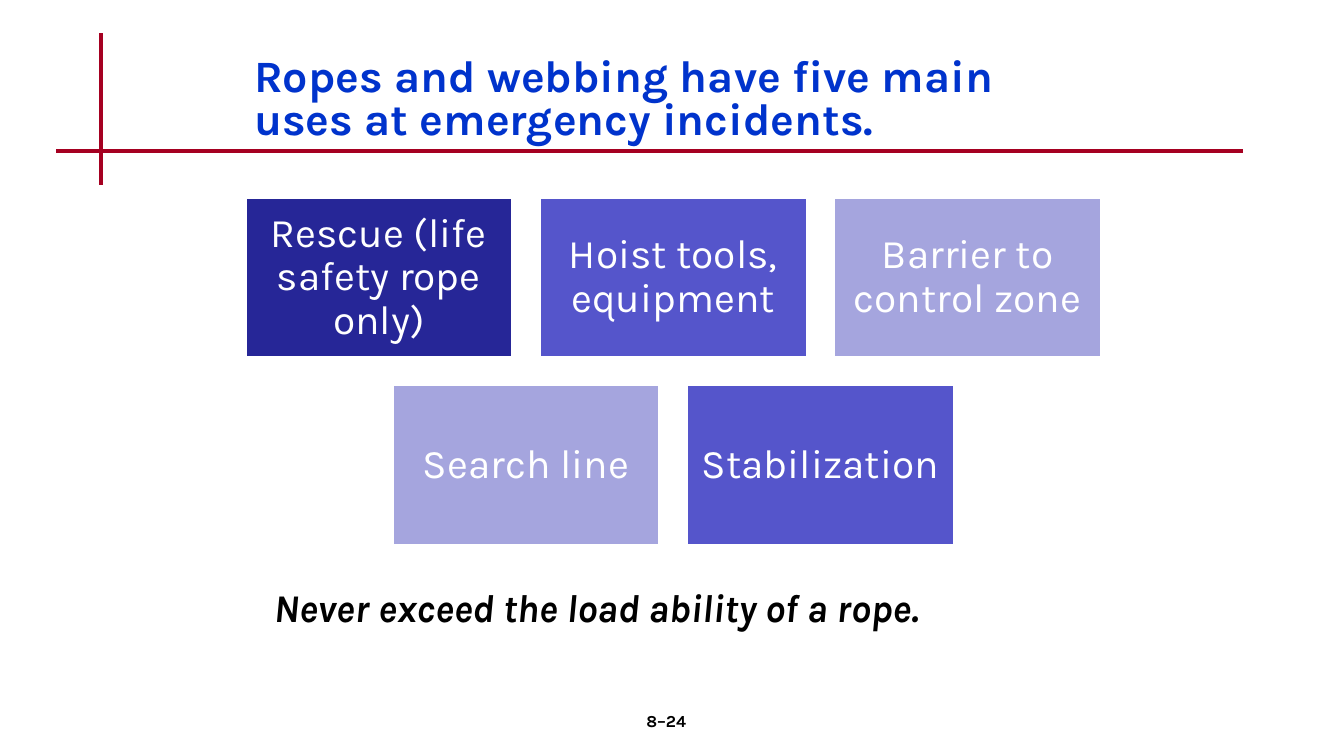
from dataclasses import dataclass

from pptx import Presentation
from pptx.dml.color import RGBColor
from pptx.enum.shapes import MSO_CONNECTOR, MSO_SHAPE
from pptx.enum.text import MSO_ANCHOR, PP_ALIGN
from pptx.oxml.ns import qn
from pptx.util import Cm, Pt
from lxml import etree

RECT = MSO_SHAPE.RECTANGLE
STRAIGHT = MSO_CONNECTOR.STRAIGHT
MIDDLE = MSO_ANCHOR.MIDDLE
TOP = MSO_ANCHOR.TOP
LEFT = PP_ALIGN.LEFT
CENTER = PP_ALIGN.CENTER
TITLE_ONLY = 5


@dataclass(frozen=True)
class Theme:
    font: str = "Karla"
    white: str = "FFFFFF"
    black: str = "000000"
    title: str = "0033CC"
    rule: str = "A50021"
    dark: str = "262697"
    medium: str = "5555CB"
    light: str = "A5A5DE"
    title_size: int = 32
    card_size: int = 29
    warning_size: int = 28
    number_size: int = 12


@dataclass(frozen=True)
class Card:
    text: str
    fill: str


@dataclass(frozen=True)
class Rule:
    x1: float
    y1: float
    x2: float
    y2: float


@dataclass(frozen=True)
class Style:
    size: int
    color: str
    bold: bool = True
    italic: bool = False
    align: int = LEFT
    anchor: int = TOP
    spacing: float = 1.0


THEME = Theme()
TITLE = Style(THEME.title_size, THEME.title, anchor=MIDDLE, spacing=0.8)
CARD = Style(THEME.card_size, THEME.white, bold=False, align=CENTER,
             anchor=MIDDLE, spacing=0.9)
WARNING = Style(THEME.warning_size, THEME.black, italic=True)
NUMBER = Style(THEME.number_size, THEME.black, align=CENTER)

RULES = [Rule(2.54, 0.84, 2.54, 4.65), Rule(1.42, 3.81, 31.32, 3.81)]
CARD_ROWS = [
    [Card("Rescue (life safety rope only)", THEME.dark),
     Card("Hoist tools, equipment", THEME.medium),
     Card("Barrier to control zone", THEME.light)],
    [Card("Search line", THEME.light),
     Card("Stabilization", THEME.medium)],
]
CARD_W, CARD_H, GAP = 6.74, 4.04, 0.68
GRID_CENTER, GRID_TOP = 16.97, 4.98
CARD_INSET = 0.3


def write(sp, text: str, style: Style) -> None:
    tf = sp.text_frame
    tf.word_wrap = True
    tf.vertical_anchor = style.anchor
    p = tf.paragraphs[0]
    p.alignment = style.align
    p.line_spacing = style.spacing
    p.space_before = Pt(0)
    r = p.add_run()
    r.text = text
    r.font.name = THEME.font
    r.font.size = Pt(style.size)
    r.font.bold = style.bold
    r.font.italic = style.italic
    r.font.color.rgb = RGBColor.from_string(style.color)


def add_rule(s, rule: Rule) -> None:
    line = s.shapes.add_connector(STRAIGHT, Cm(rule.x1), Cm(rule.y1),
                                  Cm(rule.x2), Cm(rule.y2))
    line.line.color.rgb = RGBColor.from_string(THEME.rule)
    line.line.width = Pt(3)
    etree.SubElement(line._element.spPr, qn("a:effectLst"))


def add_card(s, card: Card, left: float, top: float) -> None:
    sp = s.shapes.add_shape(RECT, Cm(left), Cm(top), Cm(CARD_W), Cm(CARD_H))
    sp.shadow.inherit = False
    sp.fill.solid()
    sp.fill.fore_color.rgb = RGBColor.from_string(card.fill)
    sp.line.color.rgb = RGBColor.from_string(THEME.white)
    sp.line.width = Pt(2)
    tf = sp.text_frame
    tf.margin_left = tf.margin_right = Cm(CARD_INSET)
    tf.margin_top = tf.margin_bottom = Cm(CARD_INSET)
    write(sp, card.text, CARD)


def add_card_row(s, cards: list[Card], top: float) -> None:
    row_width = len(cards) * (CARD_W + GAP) - GAP
    left = GRID_CENTER - row_width / 2
    for i, card in enumerate(cards):
        add_card(s, card, left + i * (CARD_W + GAP), top)


def add_text(s, text: str, style: Style, left: float, top: float,
             width: float, height: float) -> None:
    sp = s.shapes.add_textbox(Cm(left), Cm(top), Cm(width), Cm(height))
    write(sp, text, style)


def main() -> None:
    prs = Presentation()
    prs.slide_width, prs.slide_height = Cm(33.87), Cm(19.05)
    s = prs.slides.add_slide(prs.slide_layouts[TITLE_ONLY])
    s.background.fill.solid()
    s.background.fill.fore_color.rgb = RGBColor.from_string(THEME.white)

    title = s.shapes.title
    title.left, title.top = Cm(6.15), Cm(1.27)
    title.width, title.height = Cm(21.59), Cm(2.54)
    write(title, "Ropes and webbing have five main uses at emergency incidents.",
          TITLE)

    for rule in RULES:
        add_rule(s, rule)
    for i, cards in enumerate(CARD_ROWS):
        add_card_row(s, cards, GRID_TOP + i * (CARD_H + GAP))

    add_text(s, "Never exceed the load ability of a rope.", WARNING,
             6.65, 14.58, 20.17, 1.45)
    add_text(s, "8–24", NUMBER, 13.26, 17.78, 7.06, 1.27)
    prs.save("out.pptx")


if __name__ == "__main__":
    main()
